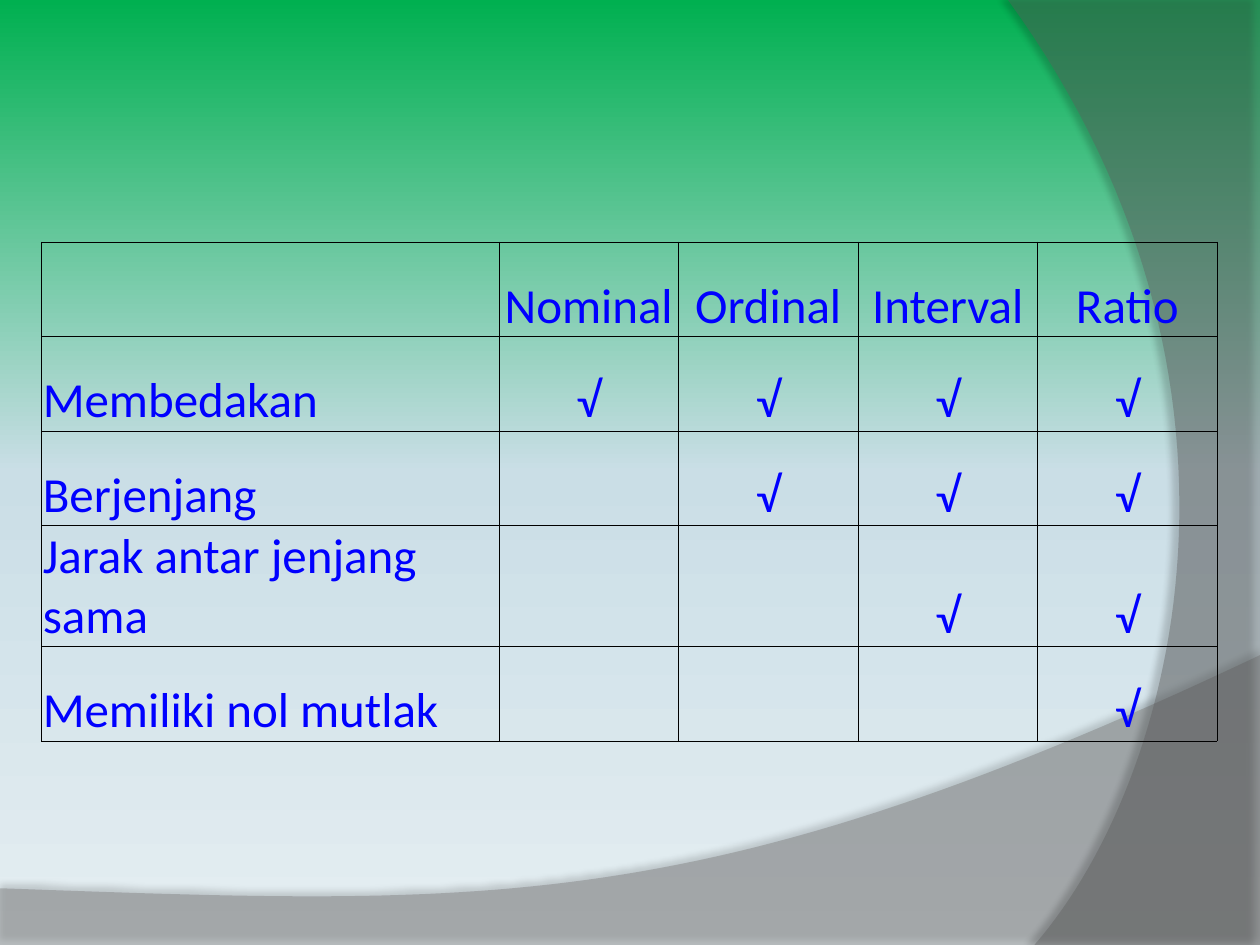
from dataclasses import dataclass

from pptx import Presentation
from pptx.dml.color import RGBColor
from pptx.enum.text import MSO_ANCHOR, PP_ALIGN
from pptx.oxml import parse_xml
from pptx.oxml.ns import nsdecls, qn
from pptx.util import Inches, Pt

Point = tuple[float, float]

COLORS = {
    "top": "00B050", "middle": "CADEE6", "bottom": "E5EEF2",
    "wave": "7F7F7F", "arc": "5E5E5E", "black": "000000", "text": "0000FF",
}
STOPS = [(0, "top"), (50, "middle"), (100, "bottom")]
HEADERS = ["Nominal", "Ordinal", "Interval", "Ratio"]
PROPERTIES = ["Membedakan", "Berjenjang", "Jarak antar jenjang sama", "Memiliki nol mutlak"]
CURVE_STEPS = 60


@dataclass
class Swoosh:
    """A translucent shape with one curved edge and a soft shadow."""
    curve: tuple[Point, Point, Point, Point]
    corners: list[Point]
    color: str
    opacity: int
    shadow_opacity: int
    shadow_distance: float
    shadow_angle: int


SWOOSHES = [
    Swoosh(((10, 5.2), (5.59, 7.29), (3.91, 7.19), (0, 7.05)),
           [(0, 7.5), (10, 7.5)], "wave", 45, 35, 3.5, 270),
    Swoosh(((8.21, 7.5), (9.35, 6.19), (10.18, 3), (8, 0)),
           [(10, 0), (10, 7.5)], "arc", 40, 45, 4, 180),
]


def color_xml(name: str, opacity: int = 100) -> str:
    """Return a colour element with the given opacity."""
    return f'<a:srgbClr val="{COLORS[name]}"><a:alpha val="{opacity * 1000}"/></a:srgbClr>'


def set_background(s) -> None:
    """Fill the slide with a vertical gradient."""
    fill = s.background.fill
    fill.gradient()
    fill.gradient_angle = 270
    stops = s._element.find(".//" + qn("a:gsLst"))
    stops.clear()
    for pos, name in STOPS:
        stops.append(parse_xml(
            f'<a:gs {nsdecls("a")} pos="{pos * 1000}">{color_xml(name)}</a:gs>'))


def bezier(curve: tuple[Point, Point, Point, Point], t: float) -> Point:
    """Return the point of a cubic curve at t."""
    weights = ((1 - t) ** 3, 3 * t * (1 - t) ** 2, 3 * t ** 2 * (1 - t), t ** 3)
    return (sum(w * p[0] for w, p in zip(weights, curve)),
            sum(w * p[1] for w, p in zip(weights, curve)))


def add_swoosh(s, swoosh: Swoosh) -> None:
    """Draw one decorative swoosh."""
    points = [bezier(swoosh.curve, i / CURVE_STEPS) for i in range(CURVE_STEPS + 1)]
    start, *rest = [(Inches(x), Inches(y)) for x, y in points + swoosh.corners]
    builder = s.shapes.build_freeform(*start)
    builder.add_line_segments(rest, close=True)
    sp = builder.convert_to_shape()
    sp.fill.solid()
    sp.fill.fore_color.rgb = RGBColor.from_string(COLORS[swoosh.color])
    sp.fill._xPr.find(".//" + qn("a:srgbClr")).append(
        parse_xml(f'<a:alpha {nsdecls("a")} val="{swoosh.opacity * 1000}"/>'))
    sp.line.fill.background()
    sp.shadow.inherit = False
    sp._element.spPr.find(qn("a:effectLst")).append(parse_xml(
        f'<a:outerShdw {nsdecls("a")} blurRad="{Pt(4)}" dist="{Pt(swoosh.shadow_distance)}" '
        f'dir="{swoosh.shadow_angle * 60000}" algn="ctr" rotWithShape="0">'
        f'{color_xml("black", swoosh.shadow_opacity)}</a:outerShdw>'))


def format_cell(cell, text: str, align: PP_ALIGN) -> None:
    """Give a cell thin borders, no fill and its text."""
    tc_pr = cell._tc.get_or_add_tcPr()
    for side in "LRTB":
        tc_pr.append(parse_xml(
            f'<a:ln{side} {nsdecls("a")} w="{Pt(0.5)}"><a:solidFill>'
            f'{color_xml("black")}</a:solidFill></a:ln{side}>'))
    cell.fill.background()
    cell.vertical_anchor = MSO_ANCHOR.BOTTOM
    cell.margin_left = cell.margin_right = cell.margin_top = Inches(0.01)
    cell.margin_bottom = 0
    p = cell.text_frame.paragraphs[0]
    p.text = text
    p.alignment = align
    p.font.name = "Calibri"
    p.font.size = Pt(28)
    p.font.color.rgb = RGBColor.from_string(COLORS["text"])


def add_scale_table(s) -> None:
    """Add the table of measurement scales and their properties."""
    rows = [["", *HEADERS]]
    for i, name in enumerate(PROPERTIES):
        rows.append([name, *("√" if j >= i else "" for j in range(len(HEADERS)))])
    table = s.shapes.add_table(len(rows), len(rows[0]), Inches(0.33), Inches(1.92),
                               Inches(9.33), Inches(0.75 * len(rows))).table
    table.first_row = table.horz_banding = False
    for j, column in enumerate(table.columns):
        column.width = Inches(1.425 if j else 3.63)
    for i, row in enumerate(rows):
        for j, text in enumerate(row):
            format_cell(table.cell(i, j), text, PP_ALIGN.CENTER if j else PP_ALIGN.LEFT)


def main() -> None:
    """Build the slide and save it."""
    prs = Presentation()
    prs.slide_width, prs.slide_height = Inches(10), Inches(7.5)
    s = prs.slides.add_slide(prs.slide_layouts[6])
    set_background(s)
    for swoosh in SWOOSHES:
        add_swoosh(s, swoosh)
    add_scale_table(s)
    prs.save("out.pptx")


if __name__ == "__main__":
    main()
